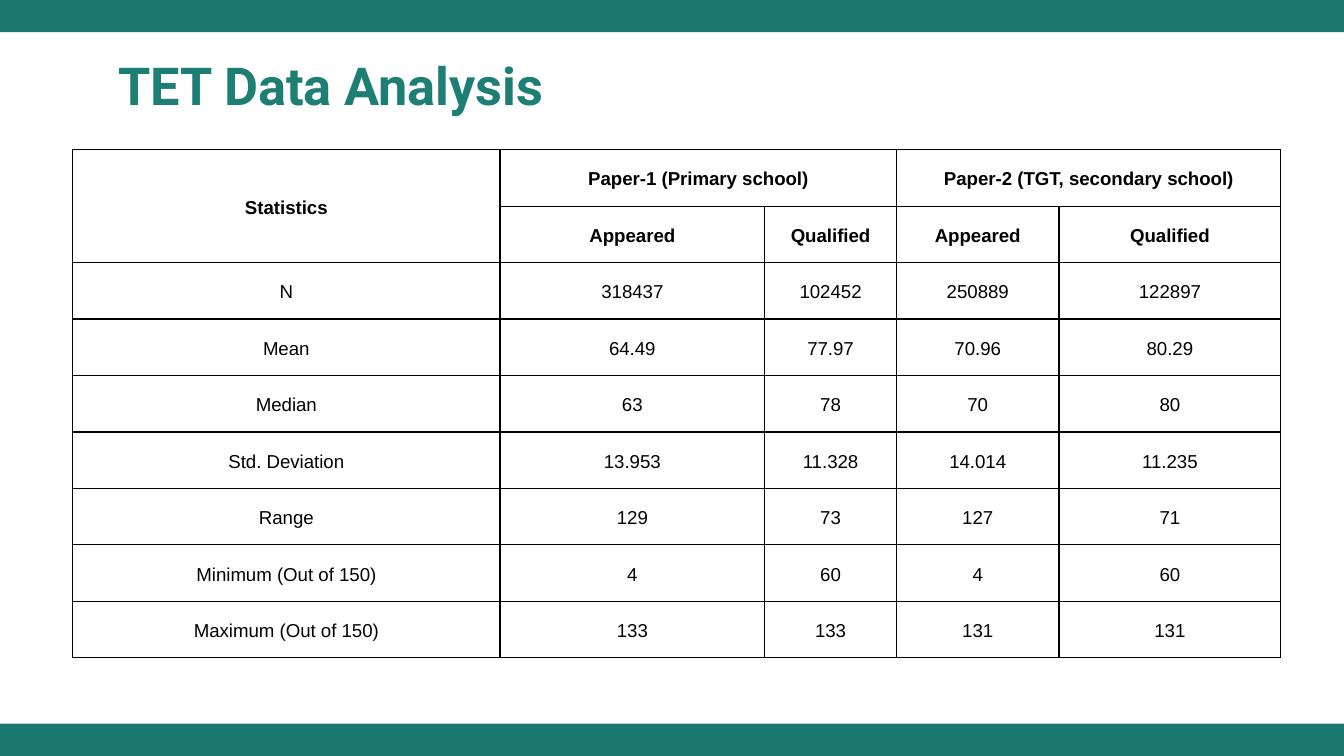
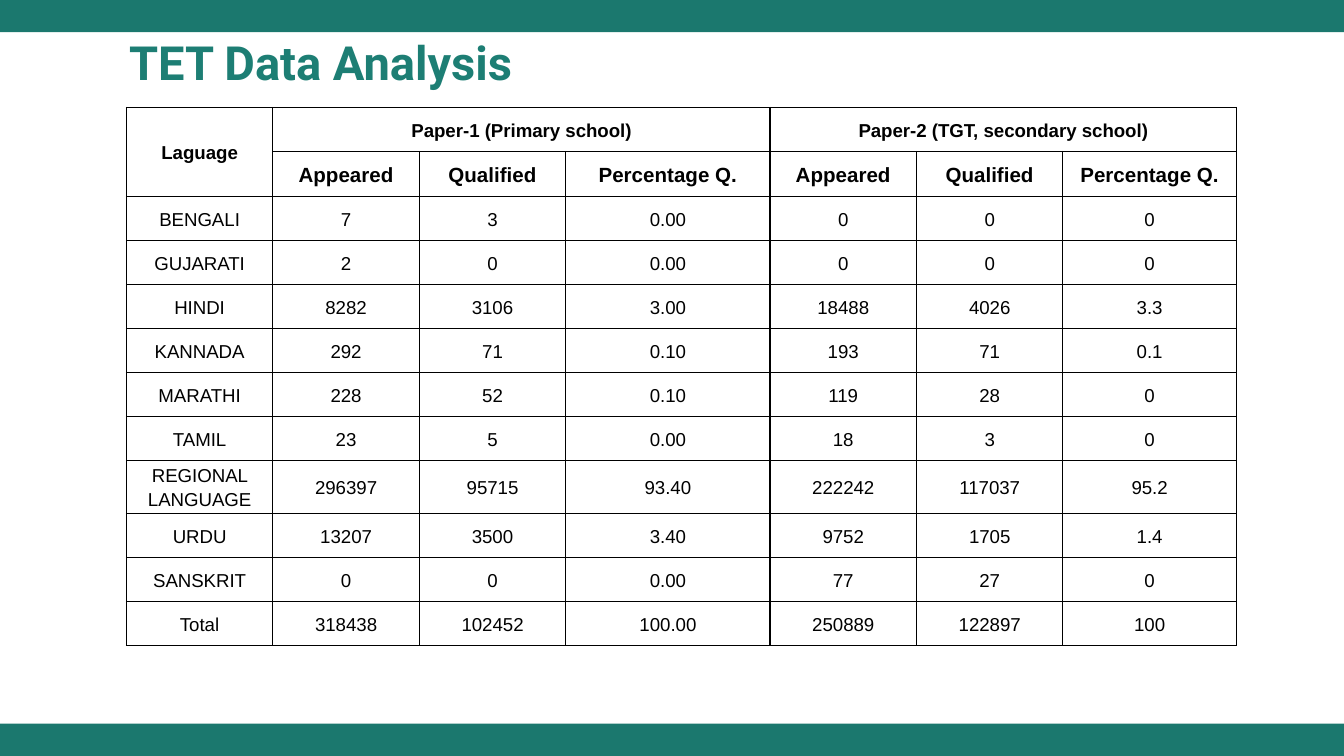
import pptx
import pptx.dml.color
import pptx.enum.shapes
import pptx.enum.text
import pptx.oxml
import pptx.oxml.ns
import pptx.util

# Shared look
SLIDE_WIDTH = pptx.util.Inches(10)
SLIDE_HEIGHT = pptx.util.Inches(5.625)
BAND_COLOR, TITLE_COLOR, INK = "1B786E", "1D7E74", "000000"
TITLE_FONT, TABLE_FONT = "Roboto", "Arial"
BAND_HEIGHT = 4.27
TITLE = "TET Data Analysis"
PAPERS = ("Paper-1 (Primary school)", "Paper-2 (TGT, secondary school)")
HEADER_ROWS = 2

# Table contents
SCORE_ROWS = [
    ("N", "318437", "102452", "250889", "122897"),
    ("Mean", "64.49", "77.97", "70.96", "80.29"),
    ("Median", "63", "78", "70", "80"),
    ("Std. Deviation", "13.953", "11.328", "14.014", "11.235"),
    ("Range", "129", "73", "127", "71"),
    ("Minimum (Out of 150)", "4", "60", "4", "60"),
    ("Maximum (Out of 150)", "133", "133", "131", "131"),
]
LANGUAGE_ROWS = [
    ("BENGALI", "7", "3", "0.00", "0", "0", "0"),
    ("GUJARATI", "2", "0", "0.00", "0", "0", "0"),
    ("HINDI", "8282", "3106", "3.00", "18488", "4026", "3.3"),
    ("KANNADA", "292", "71", "0.10", "193", "71", "0.1"),
    ("MARATHI", "228", "52", "0.10", "119", "28", "0"),
    ("TAMIL", "23", "5", "0.00", "18", "3", "0"),
    ("REGIONAL LANGUAGE", "296397", "95715", "93.40", "222242", "117037", "95.2"),
    ("URDU", "13207", "3500", "3.40", "9752", "1705", "1.4"),
    ("SANSKRIT", "0", "0", "0.00", "77", "27", "0"),
    ("Total", "318438", "102452", "100.00", "250889", "122897", "100"),
]


def across(percent):
    return round(SLIDE_WIDTH * percent / 100)


def down(percent):
    return round(SLIDE_HEIGHT * percent / 100)


def color(hex_code):
    return pptx.dml.color.RGBColor.from_string(hex_code)


def add_run(paragraph, text, font_name, size, hex_code, bold):
    run = paragraph.add_run()
    run.text = text
    run.font.name = font_name
    run.font.size = pptx.util.Pt(size)
    run.font.bold = bold
    run.font.color.rgb = color(hex_code)


def add_master_bands(prs, slide):
    """Draw the top and bottom bands and move them to the master."""
    master_tree = prs.slide_master.element.cSld.spTree
    for number, top in enumerate((0, 100 - BAND_HEIGHT)):
        band = slide.shapes.add_shape(
            pptx.enum.shapes.MSO_SHAPE.RECTANGLE,
            0, down(top), SLIDE_WIDTH, down(BAND_HEIGHT))
        band.shadow.inherit = False
        band.fill.solid()
        band.fill.fore_color.rgb = color(BAND_COLOR)
        band.line.fill.background()
        band.element.nvSpPr.cNvPr.set("id", str(100 + number))
        master_tree.insert(2 + number, band.element)


def set_title(slide, left, top, width, height, size):
    heading = slide.shapes.title
    heading.left, heading.top = across(left), down(top)
    heading.width, heading.height = across(width), down(height)
    frame = heading.text_frame
    frame.word_wrap = True
    frame.auto_size = pptx.enum.text.MSO_AUTO_SIZE.NONE
    frame.vertical_anchor = pptx.enum.text.MSO_ANCHOR.MIDDLE
    frame.margin_left = frame.margin_right = pptx.util.Inches(0.07)
    frame.margin_top = frame.margin_bottom = pptx.util.Inches(0.04)
    paragraph = frame.paragraphs[0]
    paragraph.alignment = pptx.enum.text.PP_ALIGN.LEFT
    paragraph.line_spacing = 0.9
    add_run(paragraph, TITLE, TITLE_FONT, size, TITLE_COLOR, True)


def format_cell(cell):
    """Black hairlines on every side, no fill, small margins."""
    properties = cell._tc.get_or_add_tcPr()
    for side in ("lnL", "lnR", "lnT", "lnB"):
        properties.append(pptx.oxml.parse_xml(
            f'<a:{side} {pptx.oxml.ns.nsdecls("a")} w="{pptx.util.Pt(0.67)}">'
            f'<a:solidFill><a:srgbClr val="{INK}"/></a:solidFill></a:{side}>'))
    cell.fill.background()
    cell.vertical_anchor = pptx.enum.text.MSO_ANCHOR.MIDDLE
    cell.margin_left = cell.margin_right = pptx.util.Inches(0.03)
    cell.margin_top = cell.margin_bottom = pptx.util.Inches(0.02)


def write_cell(cell, text, size=10, bold=False):
    paragraph = cell.text_frame.paragraphs[0]
    paragraph.alignment = pptx.enum.text.PP_ALIGN.CENTER
    paragraph.line_spacing = 1.15
    add_run(paragraph, text, TABLE_FONT, size, INK, bold)


def add_results_table(slide, left, top, widths, heights, corner, measures,
                      records, measure_size=10):
    """Table with one group of measures for each paper."""
    table = slide.shapes.add_table(
        len(heights), len(widths), across(left), down(top),
        across(sum(widths)), down(sum(heights))).table
    table.first_row = table.horz_banding = False
    for column, width in zip(table.columns, widths):
        column.width = across(width)
    for row, height in zip(table.rows, heights):
        row.height = down(height)
    for cell in table.iter_cells():
        format_cell(cell)

    # Two header rows
    table.cell(0, 0).merge(table.cell(1, 0))
    write_cell(table.cell(0, 0), corner, bold=True)
    for group, paper in enumerate(PAPERS):
        first = 1 + group * len(measures)
        table.cell(0, first).merge(table.cell(0, first + len(measures) - 1))
        write_cell(table.cell(0, first), paper, bold=True)
        for offset, measure in enumerate(measures):
            write_cell(table.cell(1, first + offset), measure, measure_size, True)

    # Records
    for row_index, record in enumerate(records, HEADER_ROWS):
        for column_index, value in enumerate(record):
            write_cell(table.cell(row_index, column_index), value)


def main():
    prs = pptx.Presentation()
    prs.slide_width, prs.slide_height = SLIDE_WIDTH, SLIDE_HEIGHT
    title_only = prs.slide_layouts[5]

    # Score statistics
    scores = prs.slides.add_slide(title_only)
    add_master_bands(prs, scores)
    set_title(scores, 8.1, 6.76, 84.5, 9.96, 28)
    add_results_table(
        scores, 5.4, 19.8, (31.8, 19.7, 9.8, 12.1, 16.5),
        [7.47] * (HEADER_ROWS + len(SCORE_ROWS)),
        "Statistics", ("Appeared", "Qualified"), SCORE_ROWS)

    # Results by language
    languages = prs.slides.add_slide(title_only)
    set_title(languages, 8.9, 5.33, 84.2, 6.58, 25.2)
    add_results_table(
        languages, 9.4, 14.22, (10.9, 10.9, 10.9, 15.2, 10.9, 10.9, 12.9),
        [5.82, 5.95] + [5.82] * len(LANGUAGE_ROWS),
        "Laguage", ("Appeared", "Qualified", "Percentage Q."),
        LANGUAGE_ROWS, measure_size=11)

    prs.save("out.pptx")


if __name__ == "__main__":
    main()
